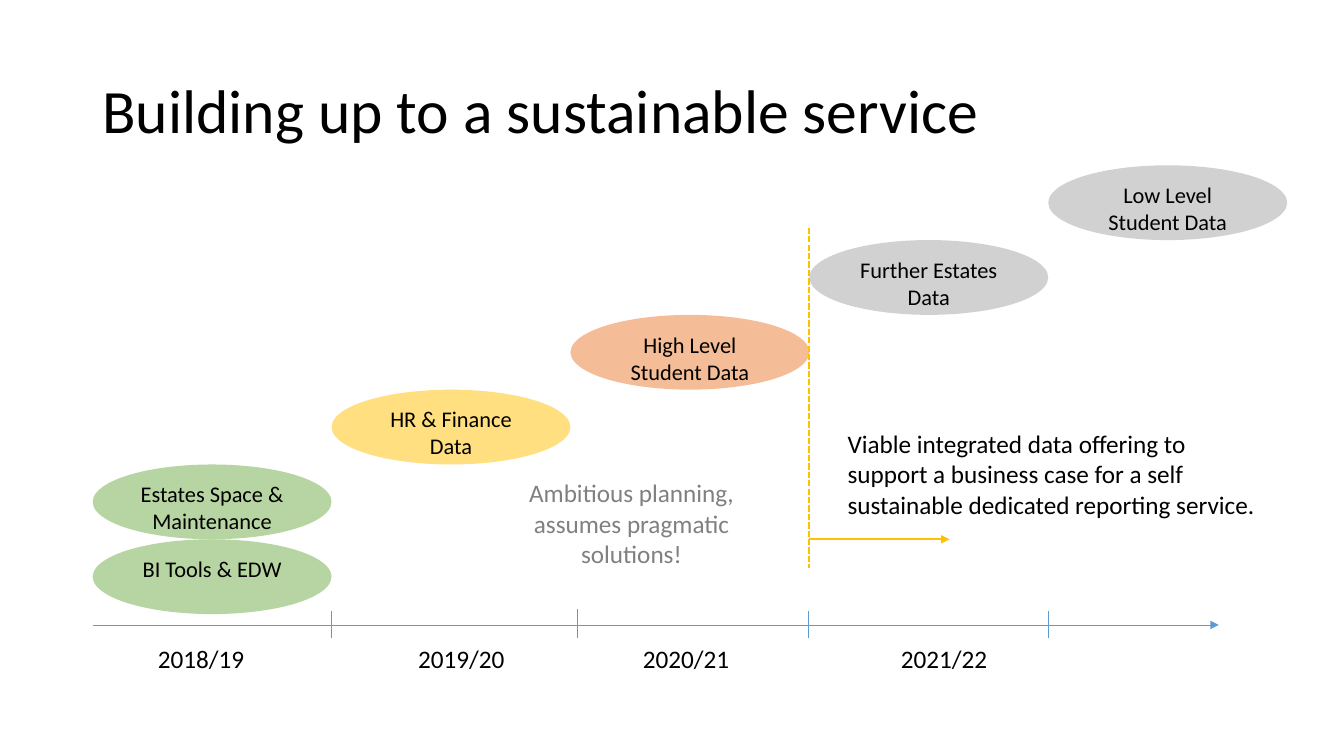
"""Build the slide showing the yearly steps towards a sustainable data service."""
from lxml import etree
from pptx import Presentation
from pptx import util as u
from pptx.dml.color import RGBColor
from pptx.enum import dml, shapes, text
from pptx.oxml import ns

BLACK = RGBColor(0x00, 0x00, 0x00)
GREY = RGBColor(0x80, 0x80, 0x80)
GREEN = RGBColor(0x70, 0xAD, 0x47)
GOLD = RGBColor(0xFF, 0xC0, 0x00)
ORANGE = RGBColor(0xED, 0x7D, 0x31)
SILVER = RGBColor(0xA5, 0xA5, 0xA5)
BLUE = RGBColor(0x5B, 0x9B, 0xD5)

LEFT, STEP_WIDTH = 66.2, 170.65
BASE_TOP, STEP_HEIGHT = 385.2, 53.43
AXIS_Y = 446.4


def write(box, words, size, color=BLACK, align=text.PP_ALIGN.LEFT,
          anchor=text.MSO_ANCHOR.TOP, fit=text.MSO_AUTO_SIZE.NONE, spacing=1.0):
    frame = box.text_frame
    frame_format = {"word_wrap": True, "auto_size": fit, "vertical_anchor": anchor}
    for name, value in frame_format.items():
        setattr(frame, name, value)
    para = frame.paragraphs[0]
    para.alignment, para.line_spacing = align, spacing
    span = para.add_run()
    span.text = words
    for name, value in {"name": "Calibri", "size": u.Pt(size)}.items():
        setattr(span.font, name, value)
    span.font.color.rgb = color


def draw_line(start_x, start_y, end_x, end_y, color, width, dash=None, arrow=False):
    line = page.shapes.add_connector(
        shapes.MSO_CONNECTOR.STRAIGHT, *map(u.Pt, (start_x, start_y, end_x, end_y)))
    line.line.color.rgb = color
    line.line.width = u.Pt(width)
    if dash:
        line.line.dash_style = dash
    if arrow:
        etree.SubElement(line.line._get_or_add_ln(), ns.qn("a:tailEnd"), type="triangle")
    etree.SubElement(line._element.spPr, ns.qn("a:effectLst"))


deck = Presentation()
deck.slide_width, deck.slide_height = u.Pt(960), u.Pt(540)
page = deck.slides.add_slide(deck.slide_layouts[6])

title = page.shapes.add_textbox(*map(u.Pt, (66.2, 28.8, 828, 104.4)))
write(title, "Building up to a sustainable service", 44,
      anchor=text.MSO_ANCHOR.MIDDLE, spacing=0.9)

stages = [
    ("BI Tools & EDW", 0, 0, GREEN),
    ("Estates Space & Maintenance", 0, 1, GREEN),
    ("HR & Finance Data", 1, 2, GOLD),
    ("High Level Student Data", 2, 3, ORANGE),
    ("Further Estates Data", 3, 4, SILVER),
    ("Low Level Student Data", 4, 5, SILVER),
]
for words, year, level, color in stages:
    stage = page.shapes.add_shape(
        shapes.MSO_SHAPE.OVAL, u.Pt(LEFT + year * STEP_WIDTH),
        u.Pt(BASE_TOP - level * STEP_HEIGHT), u.Pt(STEP_WIDTH), u.Pt(STEP_HEIGHT))
    stage.shadow.inherit = False
    stage.fill.solid()
    stage.fill.fore_color.rgb = color
    tint = stage._element.spPr.find(".//" + ns.qn("a:srgbClr"))
    etree.SubElement(tint, ns.qn("a:alpha"), val="50000")
    stage.line.fill.background()
    write(stage, words, 16, align=text.PP_ALIGN.CENTER)

milestone_x = LEFT + 3 * STEP_WIDTH
draw_line(milestone_x, 162.7, milestone_x, 405.4, GOLD, 1.5, dash=dml.MSO_LINE.SQUARE_DOT)
draw_line(milestone_x, 385.2, 678.2, 385.2, GOLD, 1.5, arrow=True)

draw_line(LEFT, AXIS_Y, 870.5, AXIS_Y, BLUE, 0.5, arrow=True)
for tick_x, tick_top in [(236.9, 436.3), (412.6, 434.9), (577.4, 436.3), (748.8, 436.3)]:
    draw_line(tick_x, tick_top, tick_x, 455.8, BLUE, 0.5)

notes = [
    ("Viable integrated data offering to support a business case for a self "
     "sustainable dedicated reporting service.",
     598.3, 302.4, 306.7, 72.7, BLACK, text.PP_ALIGN.LEFT),
    ("Ambitious planning, assumes pragmatic solutions!",
     363.6, 337.7, 175, 72.7, GREY, text.PP_ALIGN.CENTER),
]
years = [("2018/19", 105.8), ("2019/20", 291.6), ("2020/21", 452.2), ("2021/22", 636.5)]
notes += [(year, left, 455.8, 105.8, 28.8, BLACK, text.PP_ALIGN.LEFT) for year, left in years]
for words, left, top, width, height, color, align in notes:
    box = page.shapes.add_textbox(*map(u.Pt, (left, top, width, height)))
    write(box, words, 18, color, align, fit=text.MSO_AUTO_SIZE.SHAPE_TO_FIT_TEXT)

deck.save("out.pptx")
